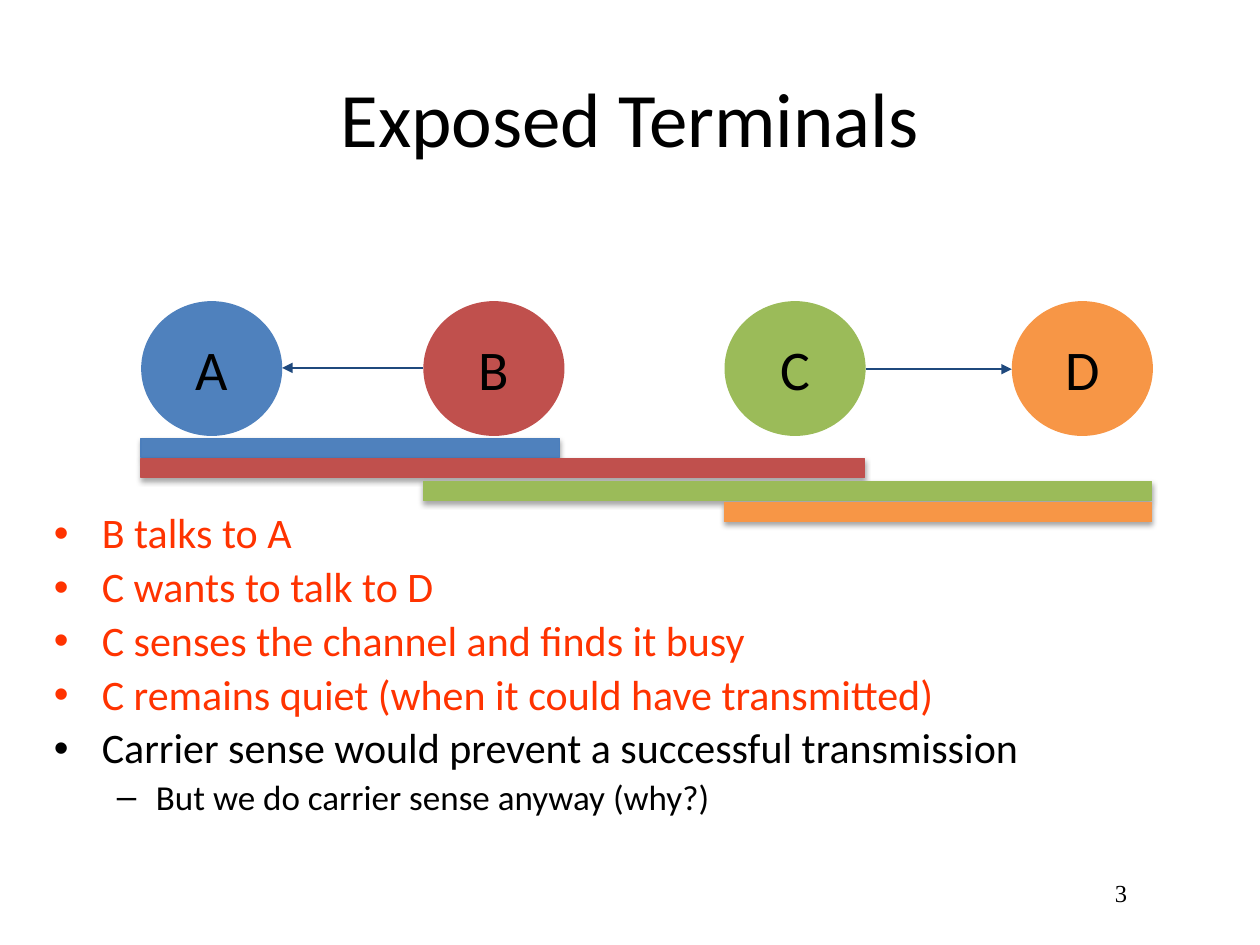
from lxml.etree import SubElement
from pptx import Presentation
from pptx.dml.color import RGBColor
from pptx.enum.shapes import MSO_CONNECTOR, MSO_SHAPE
from pptx.enum.text import MSO_ANCHOR, PP_ALIGN
from pptx.oxml.ns import qn
from pptx.util import Inches, Pt

BLACK = RGBColor(0x00, 0x00, 0x00)
RED_ORANGE = RGBColor(0xFF, 0x33, 0x00)
NAVY = RGBColor(0x1F, 0x49, 0x7D)
BLUE = RGBColor(0x4F, 0x81, 0xBD)
BLUE_EDGE = RGBColor(0x4B, 0x7E, 0xBC)
RED = RGBColor(0xC0, 0x50, 0x4D)
GREEN = RGBColor(0x9B, 0xBB, 0x59)
ORANGE = RGBColor(0xF7, 0x96, 0x46)

prs = Presentation()
prs.slide_width, prs.slide_height = Inches(10), Inches(7.5)
slide = prs.slides.add_slide(prs.slide_layouts[6])
shapes = slide.shapes


def style_text(paragraph, size, color=BLACK, font="Calibri"):
    paragraph.font.size = Pt(size)
    paragraph.font.name = font
    paragraph.font.color.rgb = color


def add_textbox(left, top, width, height):
    frame = shapes.add_textbox(Inches(left), Inches(top), Inches(width), Inches(height)).text_frame
    frame.word_wrap = True
    return frame


page_number = add_textbox(8.75, 6.92, 1, 0.42)
page_number.text = "3"
style_text(page_number.paragraphs[0], 14, font="Times New Roman")

title = add_textbox(0.5, 0.3, 9, 1.25)
title.vertical_anchor = MSO_ANCHOR.MIDDLE
title.text = "Exposed Terminals"
title.paragraphs[0].alignment = PP_ALIGN.CENTER
style_text(title.paragraphs[0], 44)

points = [
    ("B talks to A", 0, RED_ORANGE),
    ("C wants to talk to D", 0, RED_ORANGE),
    ("C senses the channel and finds it busy", 0, RED_ORANGE),
    ("C remains quiet (when it could have transmitted)", 0, RED_ORANGE),
    ("Carrier sense would prevent a successful transmission", 0, BLACK),
    ("But we do carrier sense anyway (why?)", 1, BLACK),
]
levels = [("•", 24, 0.38, 0.38), ("–", 20, 0.81, 0.31)]
explanation = add_textbox(0.33, 4.02, 9.17, 2.73)
explanation.text = "\n".join(text for text, _, _ in points)
for index, (point, (_, level, color)) in enumerate(zip(explanation.paragraphs, points)):
    bullet, size, margin, hanging = levels[level]
    point.level = level
    point.line_spacing = 0.9
    if index:
        point.space_before = Pt(size * 0.2)
    properties = point._p.get_or_add_pPr()
    properties.set("marL", str(Inches(margin)))
    properties.set("indent", str(-Inches(hanging)))
    SubElement(properties, qn("a:buFont"), typeface="Arial")
    SubElement(properties, qn("a:buChar"), char=bullet)
    style_text(point, size, color)

NODE_WIDTH, NODE_HEIGHT = 1.12, 1.07
node_left = {"A": 1.12, "B": 3.36, "C": 5.75, "D": 8.03}
node_color = {"A": BLUE, "B": RED, "C": GREEN, "D": ORANGE}
for letter, left in node_left.items():
    node = shapes.add_shape(MSO_SHAPE.OVAL, Inches(left), Inches(2.39),
                            Inches(NODE_WIDTH), Inches(NODE_HEIGHT))
    node.shadow.inherit = False
    node.fill.solid()
    node.fill.fore_color.rgb = node_color[letter]
    node.line.fill.background()
    node.text_frame.word_wrap = False
    node.text_frame.vertical_anchor = MSO_ANCHOR.MIDDLE
    node.text_frame.text = letter
    label = node.text_frame.paragraphs[0]
    label.alignment = PP_ALIGN.CENTER
    style_text(label, 32)

ranges = [
    (node_left["A"], 3.48, 3.32, BLUE, BLUE_EDGE),
    (node_left["A"], 3.64, 5.74, RED, RED),
    (node_left["B"], 3.82, 5.78, GREEN, GREEN),
    (node_left["C"], 3.99, 3.39, ORANGE, ORANGE),
]
for left, top, width, fill, edge in ranges:
    radio_range = shapes.add_shape(MSO_SHAPE.RECTANGLE, Inches(left), Inches(top),
                                   Inches(width), Inches(0.15))
    radio_range.fill.solid()
    radio_range.fill.fore_color.rgb = fill
    radio_range.line.color.rgb = edge
    radio_range.line.width = Pt(0.75)
    radio_range.shadow.inherit = False
    effects = radio_range._element.spPr.find(qn("a:effectLst"))
    shadow = SubElement(effects, qn("a:outerShdw"), blurRad=str(Pt(3.1)), dist=str(Pt(1.8)),
                        dir="5400000", rotWithShape="0")
    shadow_color = SubElement(shadow, qn("a:srgbClr"), val=str(BLACK))
    SubElement(shadow_color, qn("a:alpha"), val="35000")

transmissions = [
    (node_left["C"] + NODE_WIDTH, node_left["D"], 2.93),
    (node_left["B"], node_left["A"] + NODE_WIDTH, 2.92),
]
for start, end, height in transmissions:
    transmission = shapes.add_connector(MSO_CONNECTOR.STRAIGHT, Inches(start), Inches(height),
                                        Inches(end), Inches(height))
    transmission.line.color.rgb = NAVY
    transmission.line.width = Pt(1)
    SubElement(transmission.line._get_or_add_ln(), qn("a:tailEnd"), type="triangle")
    SubElement(transmission._element.spPr, qn("a:effectLst"))

prs.save("out.pptx")
